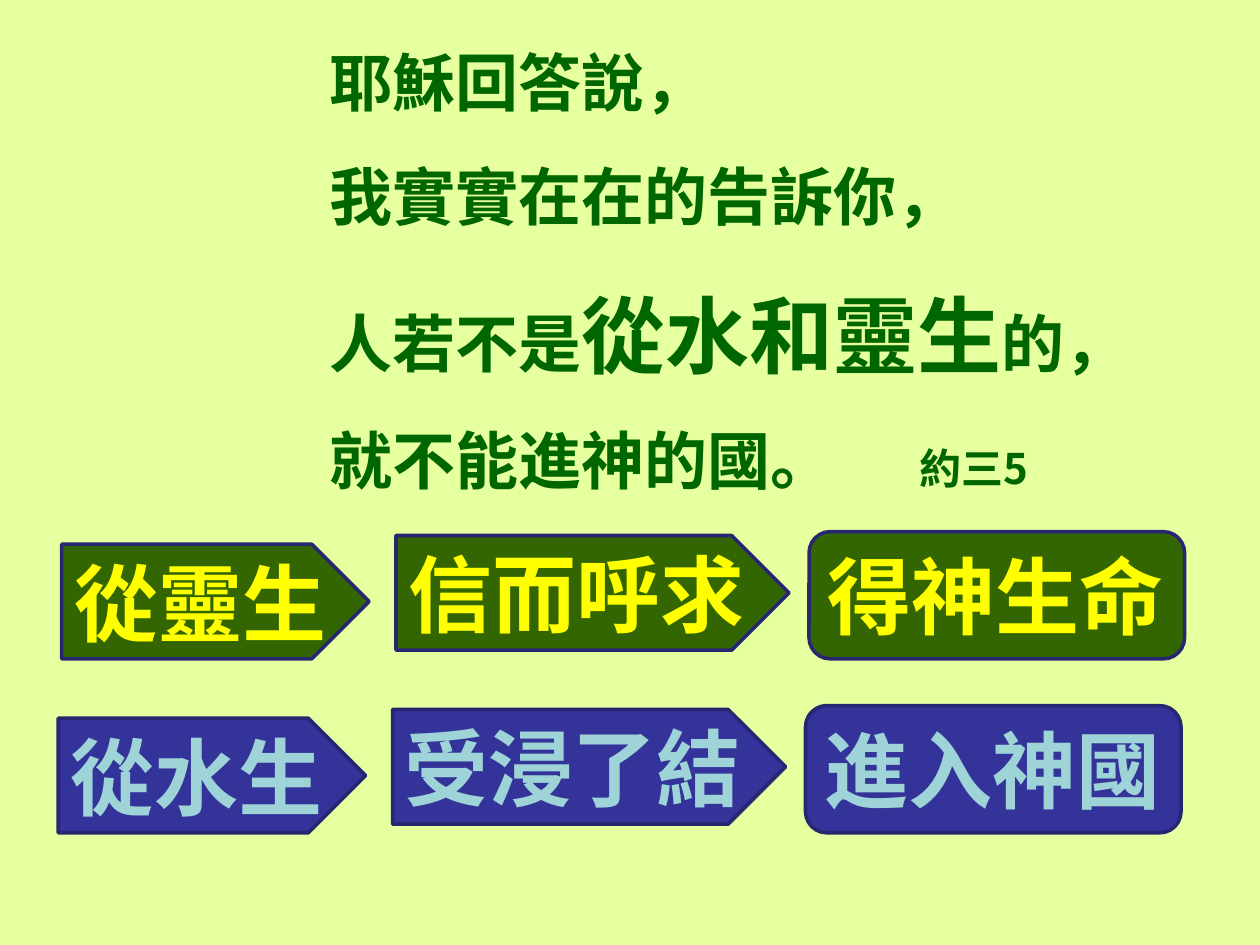
from pptx import Presentation
from pptx.dml.color import RGBColor
from pptx.enum.shapes import MSO_SHAPE as SHAPE
from pptx.enum.text import MSO_ANCHOR as ANCHOR, PP_ALIGN as ALIGN
from pptx.oxml.ns import qn
from pptx.util import Pt
from lxml.etree import SubElement

FONT = "Noto Sans CJK SC"
VERSE_COLOR = "006600"
CITATION_TAB = 337

# Each line is a list of (text, size) runs
VERSE = [
    [("耶穌回答說，", 36)],
    [("我實實在在的告訴你，", 36)],
    [("人若不是", 36), ("從水和靈生", 48), ("的，", 36)],
    [("就不能進神的國。\t", 36), ("約三5", 24)],
]

# Kind, left, top and size of each step within its row
STEPS = [
    (SHAPE.PENTAGON, 0, 7.2, 175.7, 65.5),
    (SHAPE.PENTAGON, 191, 2.2, 224.6, 65.5),
    (SHAPE.ROUNDED_RECTANGLE, 427, 0, 214.6, 72.7),
]


def color(value):
    return RGBColor.from_string(value)


def add_run(p, text, size, value):
    r = p.add_run()
    r.text = text
    r.font.name = FONT
    r.font.size = Pt(size)
    r.font.bold = True
    r.font.color.rgb = color(value)
    SubElement(r.font._element, qn("a:ea"), typeface=FONT)


def add_verse(s, left, top, width, height):
    tf = s.shapes.add_textbox(Pt(left), Pt(top), Pt(width), Pt(height)).text_frame
    tf.word_wrap = True
    for i, line in enumerate(VERSE):
        p = tf.paragraphs[0] if i == 0 else tf.add_paragraph()
        p.line_spacing = 1.5
        for text, size in line:
            add_run(p, text, size, VERSE_COLOR)
    # Tab stop that sets the citation apart from the verse
    tabs = SubElement(p._p.get_or_add_pPr(), qn("a:tabLst"))
    SubElement(tabs, qn("a:tab"), pos=str(Pt(CITATION_TAB)), algn="l")


def add_step_row(s, left, top, labels, fill, text_color):
    for label, (kind, dx, dy, width, height) in zip(labels, STEPS):
        sp = s.shapes.add_shape(kind, Pt(left + dx), Pt(top + dy), Pt(width), Pt(height))
        sp.shadow.inherit = False
        sp.fill.solid()
        sp.fill.fore_color.rgb = color(fill)
        sp.line.color.rgb = color("262671")
        sp.line.width = Pt(2)
        tf = sp.text_frame
        tf.word_wrap = False
        tf.vertical_anchor = ANCHOR.MIDDLE
        p = tf.paragraphs[0]
        p.alignment = ALIGN.LEFT
        add_run(p, label, 48, text_color)


def main():
    prs = Presentation()
    prs.slide_width, prs.slide_height = Pt(720), Pt(540)
    s = prs.slides.add_slide(prs.slide_layouts[6])
    s.background.fill.solid()
    s.background.fill.fore_color.rgb = color("E6FF9F")

    add_verse(s, 181.4, 0, 510.5, 283)
    # Born of the Spirit, then born of water
    add_step_row(s, 35.3, 303.8, ["從靈生", "信而呼求", "得神生命"], "336600", "FFFF00")
    add_step_row(s, 33.3, 403.2, ["從水生", "受浸了結", "進入神國"], "333399", "9ED3D7")

    prs.save("out.pptx")


if __name__ == "__main__":
    main()
